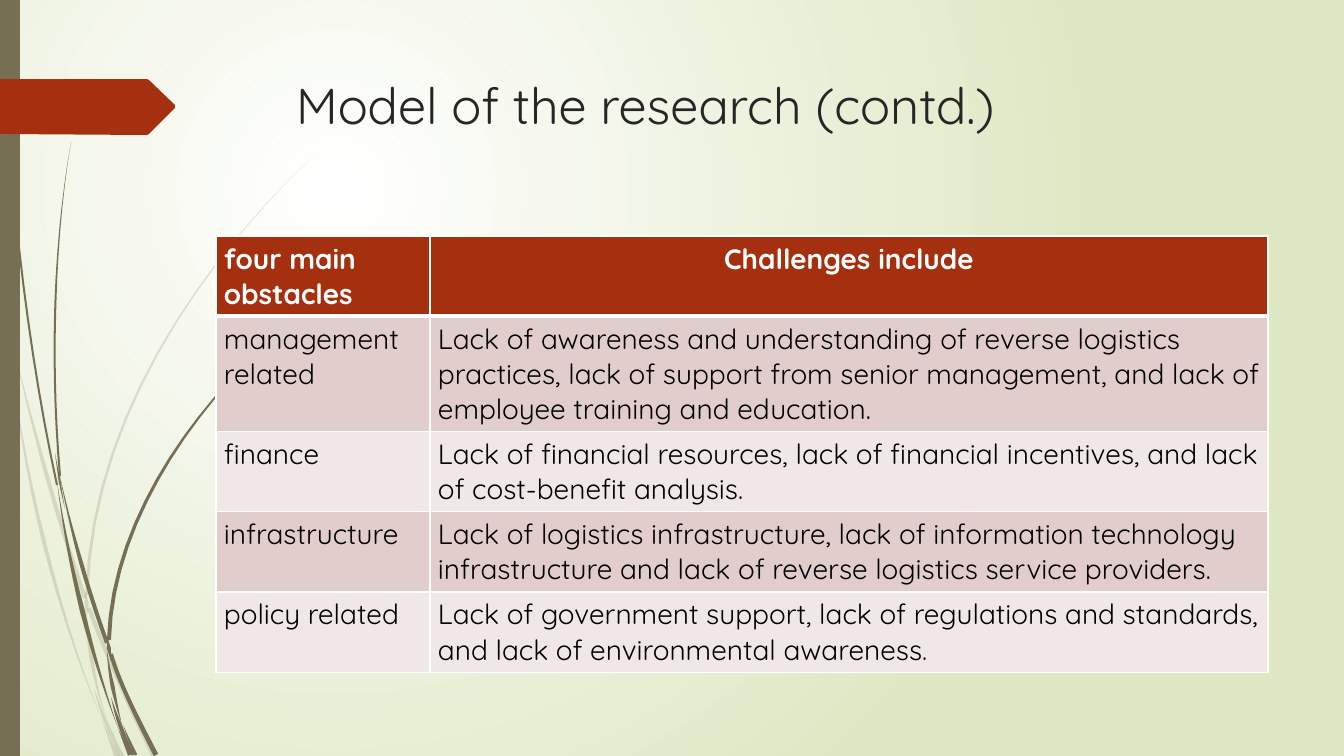
from dataclasses import dataclass
from math import hypot

from lxml.etree import SubElement
from pptx import Presentation
from pptx.dml.color import RGBColor as RGB
from pptx.enum.shapes import MSO_SHAPE as Shape
from pptx.enum.text import MSO_ANCHOR as Anchor, PP_ALIGN as Align
from pptx.oxml import parse_xml
from pptx.oxml.ns import nsdecls, qn
from pptx.util import Emu, Pt

EMU_PER_PX = 914400 / 100.8
STEPS = 14
Point = tuple[float, float]


@dataclass(frozen=True)
class Theme:
    font: str = "Quicksand"
    title_size: int = 36
    table_size: int = 20
    title: str = "262626"
    olive: str = "766F54"
    rust: str = "A53010"
    white: str = "FFFFFF"
    black: str = "000000"
    glow_edge: str = "DFE8C4"
    bands: tuple[str, str] = ("E1CDCC", "F0E8E7")
    pale_alpha: int = 20


@dataclass(frozen=True)
class Blade:
    curve: tuple[Point, Point, Point, Point]
    widths: tuple[int, int, int]


@dataclass(frozen=True)
class Obstacle:
    name: str
    challenges: str
    height: int


T = Theme()

PALE_GRASS = [
    Blade(((0, 293), (4, 313), (7, 333), (11, 353)), (4, 2, 0)),
    Blade(((14, 348), (33, 430), (57, 517), (85, 598)), (0, 4, 4)),
    Blade(((89, 608), (100, 640), (132, 713), (154, 757)), (4, 4, 4)),
    Blade(((106, 717), (111, 730), (116, 744), (122, 757)), (0, 2, 5)),
    Blade(((11, 353), (22, 474), (58, 615), (102, 720)), (0, 4, 0)),
    Blade(((85, 604), (87, 628), (92, 680), (106, 717)), (0, 4, 0)),
    Blade(((87, 595), (91, 423), (197, 267), (314, 155)), (3, 2, 0)),
    Blade(((102, 720), (107, 732), (112, 745), (117, 757)), (0, 2, 5)),
    Blade(((86, 591), (86, 599), (87, 607), (88, 615)), (0, 4, 0)),
    Blade(((94, 689), (98, 702), (109, 733), (120, 757)), (0, 3, 0)),
]
DARK_GRASS = [
    Blade(((4, 0), (5, 161), (26, 343), (57, 485)), (1, 2, 2)),
    Blade(((60, 476), (72, 536), (89, 593), (107, 643)), (0, 4, 4)),
    Blade(((111, 654), (119, 682), (137, 718), (156, 755)), (4, 4, 5)),
    Blade(((57, 481), (68, 565), (93, 660), (118, 728)), (0, 5, 0)),
    Blade(((60, 476), (50, 362), (54, 240), (71, 142)), (2, 2, 0)),
    Blade(((123, 725), (127, 735), (131, 745), (136, 755)), (0, 2, 3)),
    Blade(((55, 453), (58, 471), (61, 490), (65, 509)), (0, 2, 0)),
    Blade(((109, 640), (112, 529), (184, 421), (263, 347)), (4, 3, 1)),
    Blade(((118, 728), (122, 737), (126, 746), (130, 755)), (0, 2, 4)),
    Blade(((107, 650), (109, 672), (115, 700), (122, 725)), (0, 4, 0)),
    Blade(((107, 636), (108, 644), (110, 653), (111, 661)), (0, 4, 0)),
    Blade(((111, 697), (116, 716), (124, 737), (133, 755)), (0, 4, 3)),
]
ARROW = [(0, 79), (147, 79), (149, 80), (175, 105), (175, 108),
         (149, 134), (147, 135), (0, 134)]

HEADER = Obstacle("four main obstacles", "Challenges include", 79)
OBSTACLES = [
    Obstacle("management related",
             "Lack of awareness and understanding of reverse logistics practices, "
             "lack of support from senior management, and lack of employee training "
             "and education.", 112),
    Obstacle("finance",
             "Lack of financial resources, lack of financial incentives, and lack "
             "of cost-benefit analysis.", 79),
    Obstacle("infrastructure",
             "Lack of logistics infrastructure, lack of information technology "
             "infrastructure and lack of reverse logistics service providers.", 79),
    Obstacle("policy related",
             "Lack of government support, lack of regulations and standards, and "
             "lack of environmental awareness.", 79),
]


def px(n: float) -> Emu:
    return Emu(round(n * EMU_PER_PX))


def paint(sp, color: str, alpha: int = 100) -> None:
    sp.shadow.inherit = False
    sp.fill.solid()
    sp.fill.fore_color.rgb = RGB.from_string(color)
    sp.line.fill.background()
    if alpha < 100:
        clr = sp._element.spPr.find(qn("a:solidFill"))[0]
        SubElement(clr, qn("a:alpha")).set("val", str(alpha * 1000))


def write(tf, text: str, *, size: int, color: str, bold: bool = False,
          align: Align = Align.LEFT) -> None:
    tf.word_wrap = True
    p = tf.paragraphs[0]
    p.alignment = align
    r = p.add_run()
    r.text = text
    r.font.name, r.font.size, r.font.bold = T.font, Pt(size), bold
    r.font.color.rgb = RGB.from_string(color)


def add_outline(s, points: list[Point], color: str, alpha: int = 100) -> None:
    first, *rest = [(px(x), px(y)) for x, y in points]
    builder = s.shapes.build_freeform(*first, scale=1.0)
    builder.add_line_segments(rest, close=True)
    paint(builder.convert_to_shape(), color, alpha)


def blade_outline(blade: Blade) -> list[Point]:
    a, b, c, d = blade.curve
    w0, w1, w2 = blade.widths
    left, right = [], []
    for i in range(STEPS + 1):
        t = i / STEPS
        u = 1 - t
        x, y = (u**3 * a[k] + 3 * u * u * t * b[k] + 3 * u * t * t * c[k]
                + t**3 * d[k] for k in (0, 1))
        dx, dy = (u * u * (b[k] - a[k]) + 2 * u * t * (c[k] - b[k])
                  + t * t * (d[k] - c[k]) for k in (0, 1))
        width = w0 + (w1 - w0) * 2 * t if t < 0.5 else w1 + (w2 - w1) * (2 * t - 1)
        half = width / 2 / hypot(dx, dy)
        left.append((x - dy * half, y + dx * half))
        right.append((x + dy * half, y - dx * half))
    return left + right[::-1]


def set_background(s) -> None:
    fill = s.background.fill
    fill.gradient()
    for stop, color in zip(fill.gradient_stops, (T.white, T.glow_edge)):
        stop.color.rgb = RGB.from_string(color)
    grad = s._element.find(".//" + qn("a:gradFill"))
    grad.replace(grad.find(qn("a:lin")), parse_xml(
        f'<a:path {nsdecls("a")} path="circle"><a:fillToRect l="50000" '
        't="50000" r="100000" b="100000"/></a:path>'))


def set_borders(cell, top: int, bottom: int) -> None:
    sides = {"lnL": 1, "lnR": 1, "lnT": top, "lnB": bottom}
    for i, (tag, width) in enumerate(sides.items()):
        cell._tc.get_or_add_tcPr().insert(i, parse_xml(
            f'<a:{tag} {nsdecls("a")} w="{Pt(width)}"><a:solidFill>'
            f'<a:srgbClr val="{T.white}"/></a:solidFill></a:{tag}>'))


def add_obstacle_table(s) -> None:
    rows = [HEADER, *OBSTACLES]
    total = sum(row.height for row in rows)
    table = s.shapes.add_table(len(rows), 2, px(216), px(236),
                               px(1052), px(total)).table
    for column, width in zip(table.columns, (214, 838)):
        column.width = px(width)
    for i, row in enumerate(rows):
        table.rows[i].height = px(row.height)
        head = i == 0
        for j, text in enumerate((row.name, row.challenges)):
            cell = table.cell(i, j)
            cell.margin_left = cell.margin_right = px(8)
            cell.margin_top = cell.margin_bottom = px(5)
            cell.fill.solid()
            cell.fill.fore_color.rgb = RGB.from_string(
                T.rust if head else T.bands[(i - 1) % 2])
            set_borders(cell, top=3 if i == 1 else 1, bottom=3 if head else 1)
            write(cell.text_frame, text, size=T.table_size, bold=head,
                  color=T.white if head else T.black,
                  align=Align.CENTER if head and j else Align.LEFT)


def main() -> None:
    prs = Presentation()
    prs.slide_width, prs.slide_height = px(1344), px(756)
    s = prs.slides.add_slide(prs.slide_layouts[5])
    set_background(s)
    for blade in PALE_GRASS:
        add_outline(s, blade_outline(blade), T.olive, T.pale_alpha)
    for blade in DARK_GRASS:
        add_outline(s, blade_outline(blade), T.olive)
    paint(s.shapes.add_shape(Shape.RECTANGLE, 0, 0, px(20), px(756)), T.olive)
    add_outline(s, ARROW, T.rust)
    title = s.shapes.title
    title.left, title.top, title.width, title.height = map(px, (286, 69, 983, 141))
    title.text_frame.vertical_anchor = Anchor.TOP
    write(title.text_frame, "Model of the research (contd.)",
          size=T.title_size, color=T.title)
    add_obstacle_table(s)
    prs.save("out.pptx")


if __name__ == "__main__":
    main()
